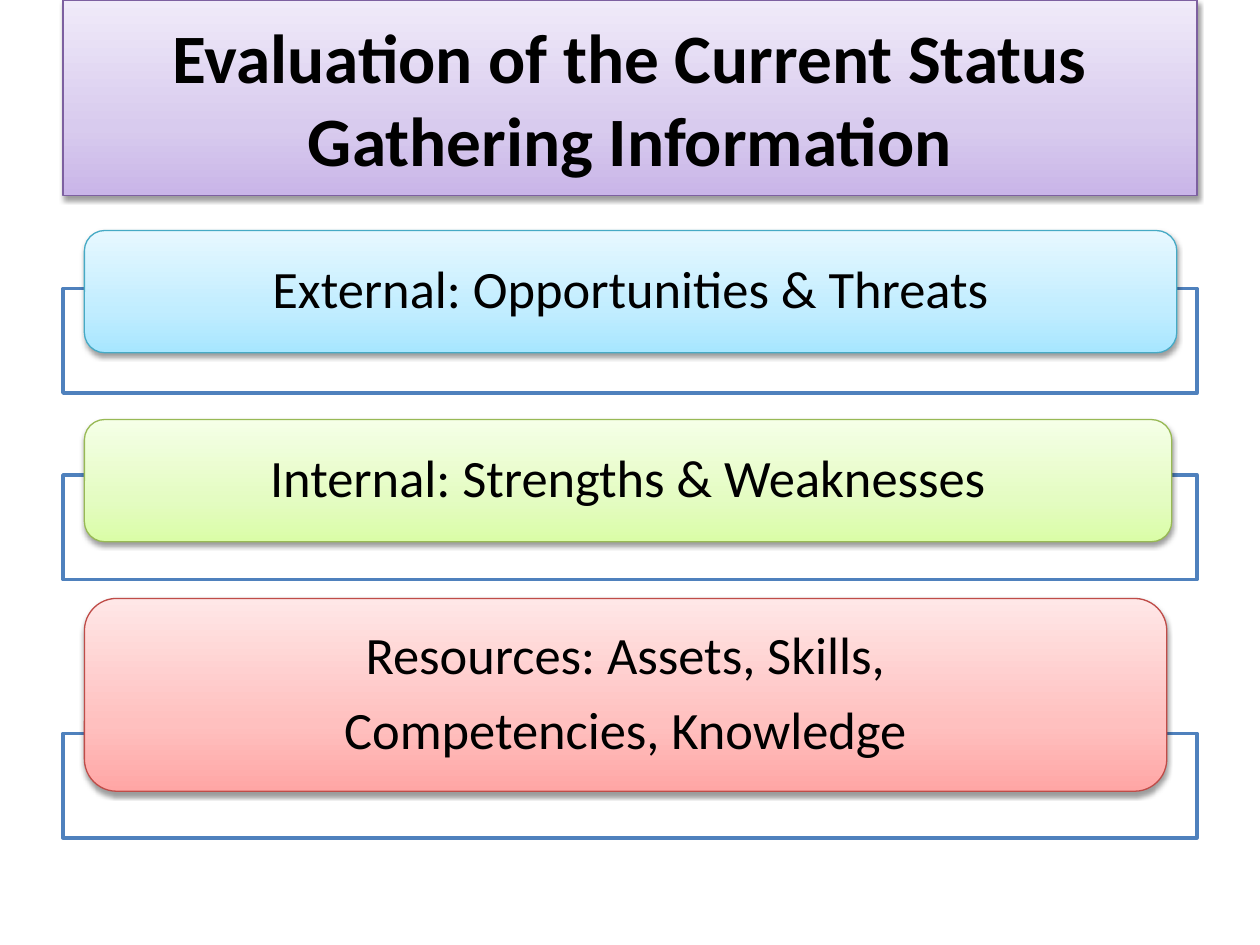
from copy import deepcopy
from pptx import Presentation, util as u
from pptx.dml.color import RGBColor
from pptx.enum import shapes, text
from pptx.oxml import parse_xml
from pptx.oxml.ns import nsdecls, qn

COLS, ROWS = 100, 75
SHADE = f"""<a:effectLst {nsdecls('a')}>
  <a:outerShdw blurRad="39400" dist="20300" dir="5400000" rotWithShape="0">
    <a:srgbClr val="000000"><a:alpha val="38000"/></a:srgbClr>
  </a:outerShdw></a:effectLst>"""


def rgb(code):
    return RGBColor.from_string(code)


class Deck:
    """Style and current slide; lengths are columns and rows of the grid."""
    font, ink, edge = "Calibri", "000000", "4F81BD"

    def __init__(self):
        self.prs = Presentation()
        self.prs.slide_width, self.prs.slide_height = u.Inches(10), u.Inches(7.5)
        self.slide = self.prs.slides.add_slide(self.prs.slide_layouts[5])

    def place(self, x, y, w, h):
        col, row = self.prs.slide_width / COLS, self.prs.slide_height / ROWS
        return round(x * col), round(y * row), round(w * col), round(h * row)

    def glow(self, shape, tones, edge):
        """Upward three-tone gradient, thin edge and soft shadow."""
        fill = shape.fill
        fill.gradient()
        fill.gradient_angle = 90
        props = shape._element.spPr
        stops = props.find(".//" + qn("a:gsLst"))
        stops.insert(1, deepcopy(stops[0]))
        for stop, tone, spot in zip(fill.gradient_stops, tones, (0, 0.35, 1)):
            stop.color.rgb = rgb(tone)
            stop.position = spot
        shape.line.color.rgb = rgb(edge)
        shape.line.width = u.Pt(0.75)
        props.append(parse_xml(SHADE))

    def run(self, par, words, size, bold=False):
        run = par.add_run()
        run.text = words
        font = run.font
        font.name, font.size, font.bold = self.font, u.Pt(size), bold
        font.color.rgb = rgb(self.ink)

    def title(self, box, lines, tones, edge):
        head = self.slide.shapes.title
        head.left, head.top, head.width, head.height = self.place(*box)
        self.glow(head, tones, edge)
        frame = head.text_frame
        frame.vertical_anchor = text.MSO_ANCHOR.MIDDLE
        par = frame.paragraphs[0]
        par.alignment = text.PP_ALIGN.CENTER
        for i, line in enumerate(lines):
            if i:
                par.add_line_break()
            self.run(par, line, 39.6, True)

    def frame(self, *box):
        rect = self.slide.shapes.add_shape(
            shapes.MSO_SHAPE.RECTANGLE, *self.place(*box))
        rect.shadow.inherit = False
        rect.fill.solid()
        rect.fill.fore_color.rgb = rgb("FFFFFF")
        tint = rect._element.spPr.find(qn("a:solidFill"))[0]
        tint.append(parse_xml(f'<a:alpha {nsdecls("a")} val="90000"/>'))
        rect.line.color.rgb = rgb(self.edge)
        rect.line.width = u.Pt(2)

    def pill(self, box, tones, edge):
        pill = self.slide.shapes.add_shape(
            shapes.MSO_SHAPE.ROUNDED_RECTANGLE, *self.place(*box))
        self.glow(pill, tones, edge)

    def label(self, box, lines):
        area = self.slide.shapes.add_textbox(*self.place(*box)).text_frame
        area.word_wrap = True
        area.vertical_anchor = text.MSO_ANCHOR.MIDDLE
        area.margin_left = area.margin_right = u.Inches(0.24)
        area.margin_top = area.margin_bottom = 0
        for i, line in enumerate(lines):
            par = area.add_paragraph() if i else area.paragraphs[0]
            par.alignment = text.PP_ALIGN.CENTER
            par.line_spacing = 0.9
            par.space_after = u.Pt(10.5)
            self.run(par, line, 30)

    def item(self, base, top, width, high, tones, edge, lines):
        """Open frame with a labelled pill lying over its upper edge."""
        self.frame(5, base, 90, 8.3)
        self.pill((6.7, top, width, high), tones, edge)
        pad = high * 0.05
        self.label((6.7 + pad, top + pad, width - 2 * pad, high - 2 * pad), lines)


ITEMS = [
    (22.9, 18.3, 86.7, 9.7, ("A7E6FF", "C1EDFF", "E7F8FF"), "46AAC5",
     ["External: Opportunities & Threats"]),
    (37.7, 33.3, 86.3, 9.7, ("DAFDA7", "E4FCC2", "F5FFE7"), "98B955",
     ["Internal: Strengths & Weaknesses"]),
    (58.2, 47.5, 85.9, 15.3, ("FFA6A5", "FFC0BF", "FFE7E7"), "BF4C48",
     ["Resources: Assets, Skills,", "Competencies, Knowledge"]),
]


def main():
    deck = Deck()
    deck.title((5, 0, 90, 15.5),
               ["Evaluation of the Current Status", "Gathering Information"],
               ("C9B5E8", "D8CBEE", "F0EAF9"), "7D60A0")
    for item in ITEMS:
        deck.item(*item)
    deck.prs.save("out.pptx")


if __name__ == "__main__":
    main()
